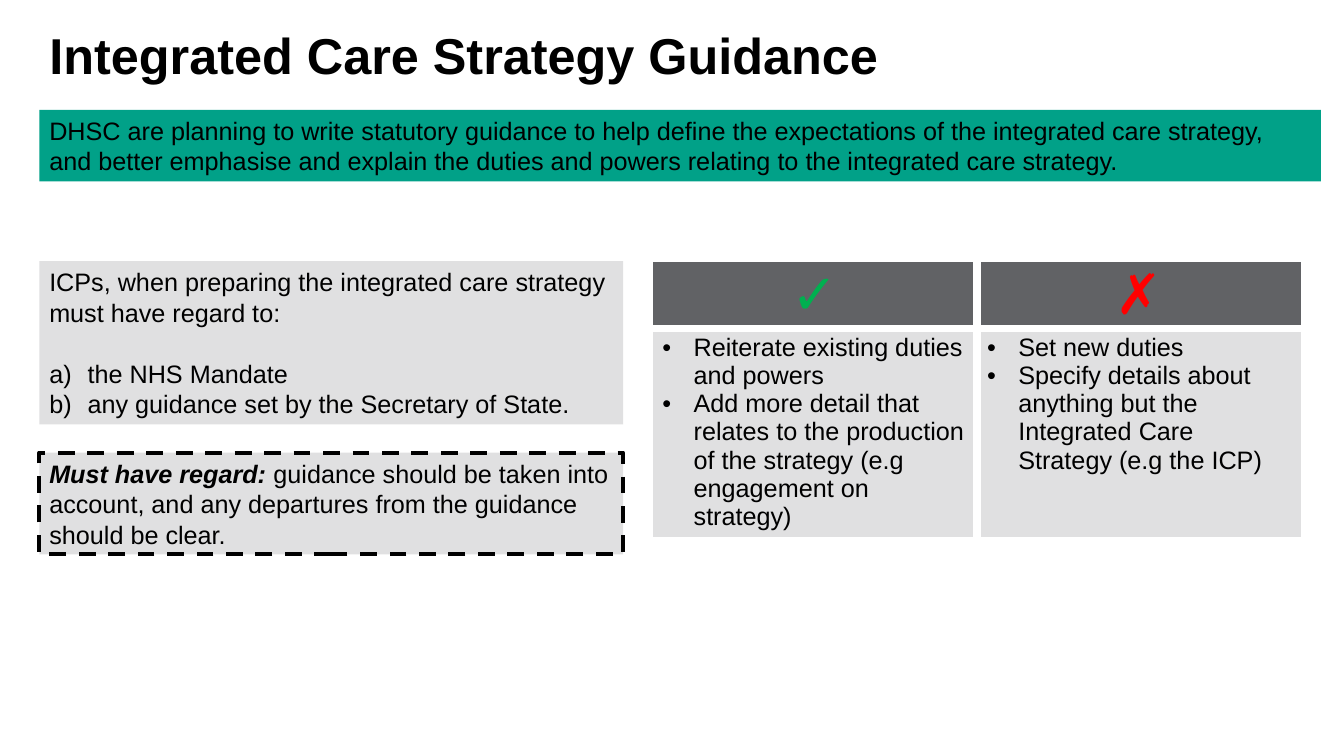
"""Build the Integrated Care Strategy Guidance slide."""
from lxml.etree import SubElement
from pptx import Presentation
from pptx.dml.color import RGBColor
from pptx.enum.dml import MSO_LINE
from pptx.enum.shapes import MSO_SHAPE
from pptx.enum.text import MSO_ANCHOR, MSO_AUTO_SIZE, PP_ALIGN
from pptx.oxml.ns import qn
from pptx.util import Inches, Pt

BLACK = RGBColor(0x00, 0x00, 0x00)
WHITE = RGBColor(0xFF, 0xFF, 0xFF)
TEAL = RGBColor(0x01, 0xA1, 0x88)
PALE = RGBColor(0xE0, 0xE0, 0xE1)
DARK = RGBColor(0x61, 0x62, 0x65)
GREEN = RGBColor(0x00, 0xB0, 0x50)
RED = RGBColor(0xFF, 0x00, 0x00)
LEFT = Inches(0.39)


def style(font, color=BLACK, **extra):
    for key, val in {"name": "Arial", "size": Pt(18), **extra}.items():
        setattr(font, key, val)
    font.color.rgb = color


def indent(para, width, tag, **attrs):
    props = para._p.get_or_add_pPr()
    props.set("marL", str(Inches(width)))
    props.set("indent", str(-Inches(width)))
    if tag == "buChar":
        SubElement(props, qn("a:buFont"), typeface="Arial")
    SubElement(props, qn(f"a:{tag}"), **attrs)


deck = Presentation()
deck.slide_width, deck.slide_height = Inches(13.33), Inches(7.5)
slide = deck.slides.add_slide(deck.slide_layouts[5])

title = slide.shapes.title
place = {"left": LEFT, "top": Inches(0.26), "width": Inches(12.52), "height": Inches(0.99)}
for key, val in place.items():
    setattr(title, key, val)
title.text_frame.text = "Integrated Care Strategy Guidance"
title.text_frame.vertical_anchor = MSO_ANCHOR.TOP
head = title.text_frame.paragraphs[0]
head.alignment = PP_ALIGN.LEFT
head.line_spacing = 0.9
style(head.font, size=Pt(36), bold=True)

BOXES = [
    (1.09, 12.71, 0.71, TEAL, [[
        ("DHSC are planning to write statutory guidance to help define the expectations of "
         "the integrated care strategy, and better emphasise and explain the duties and "
         "powers relating to the integrated care strategy.", False)]]),
    (2.59, 5.79, 1.62, PALE, [
        [("ICPs, when preparing the integrated care strategy must have regard to:", False)],
        [("the NHS Mandate", False)],
        [("any guidance set by the Secretary of State.", False)]]),
    (4.49, 5.79, 1.01, PALE, [[
        ("Must have regard: ", True),
        ("guidance should be taken into account, and any departures from the guidance "
         "should be clear.", False)]]),
]
panels = []
for top, width, height, fill, paras in BOXES:
    box = slide.shapes.add_shape(
        MSO_SHAPE.RECTANGLE, LEFT, Inches(top), Inches(width), Inches(height))
    box.shadow.inherit = False
    box.fill.solid()
    box.fill.fore_color.rgb = fill
    box.line.fill.background()
    frame = box.text_frame
    frame.word_wrap = True
    frame.auto_size = MSO_AUTO_SIZE.SHAPE_TO_FIT_TEXT
    frame.vertical_anchor = MSO_ANCHOR.TOP
    for num, runs in enumerate(paras):
        para = frame.add_paragraph() if num else frame.paragraphs[0]
        para.alignment = PP_ALIGN.LEFT
        para.line_spacing = Pt(21.8)
        if num == 1:
            para.space_before = Pt(21.8)
        if num:
            indent(para, 0.38, "buAutoNum", type="alphaLcParenR")
        for text, strong in runs:
            run = para.add_run()
            run.text = text
            style(run.font, bold=strong, italic=strong)
    panels.append(box)

edge = panels[-1].line
edge.color.rgb = BLACK
edge.width = Pt(3)
edge.dash_style = MSO_LINE.DASH

COLS = [
    ("✓", GREEN, [
        "Reiterate existing duties and powers",
        "Add more detail that relates to the production of the strategy "
        "(e.g engagement on strategy)"]),
    ("✗", RED, [
        "Set new duties",
        "Specify details about anything but the Integrated Care Strategy (e.g the ICP)"]),
]
table = slide.shapes.add_table(
    2, 2, Inches(6.47), Inches(2.59), Inches(6.44), Inches(2.74)).table
table.rows[0].height, table.rows[1].height = Inches(0.67), Inches(2.07)
for col, (mark, color, points) in enumerate(COLS):
    for row, (lines, fill) in enumerate([([mark], DARK), (points, PALE)]):
        cell = table.cell(row, col)
        cell.margin_top = cell.margin_bottom = Inches(0.05 * row)
        cell.vertical_anchor = MSO_ANCHOR.TOP if row else MSO_ANCHOR.MIDDLE
        for num, text in enumerate(lines):
            frame = cell.text_frame
            para = frame.add_paragraph() if num else frame.paragraphs[0]
            if row:
                para.line_spacing = Pt(20.15)
                indent(para, 0.31, "buChar", char="•")
            else:
                para.alignment = PP_ALIGN.CENTER
            run = para.add_run()
            run.text = text
            if row:
                style(run.font, bold=False)
            else:
                style(run.font, color, size=Pt(40), bold=False)
        sides = {"L": col, "R": 1 - col, "T": row, "B": 1 - row}
        for side, inner in sides.items():
            line = SubElement(cell._tc.get_or_add_tcPr(), qn(f"a:ln{side}"),
                              w=str(Pt(6 if inner else 1)))
            paint = SubElement(line, qn("a:solidFill"))
            SubElement(paint, qn("a:srgbClr"), val=str(WHITE))
        cell.fill.solid()
        cell.fill.fore_color.rgb = fill

deck.save("out.pptx")
